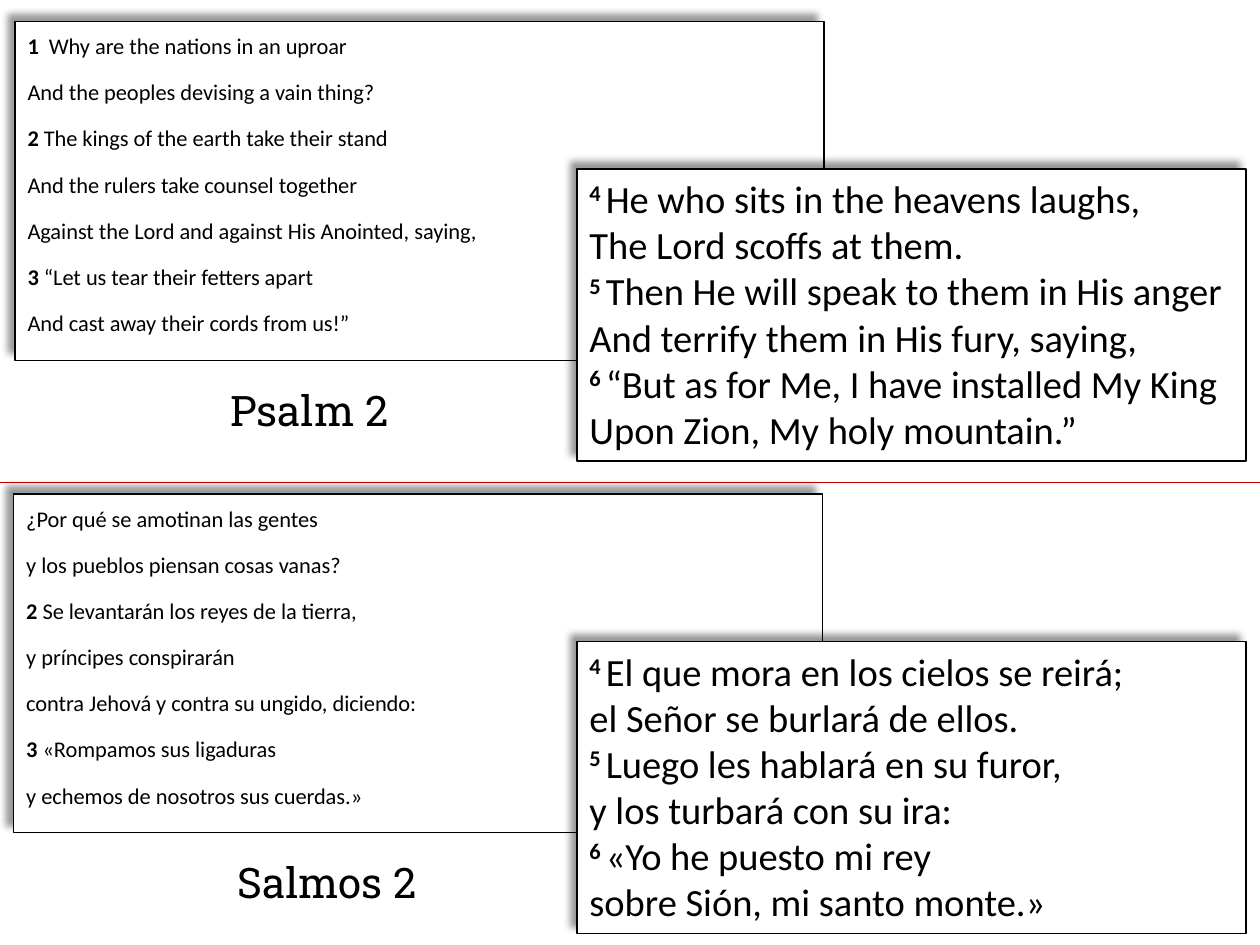
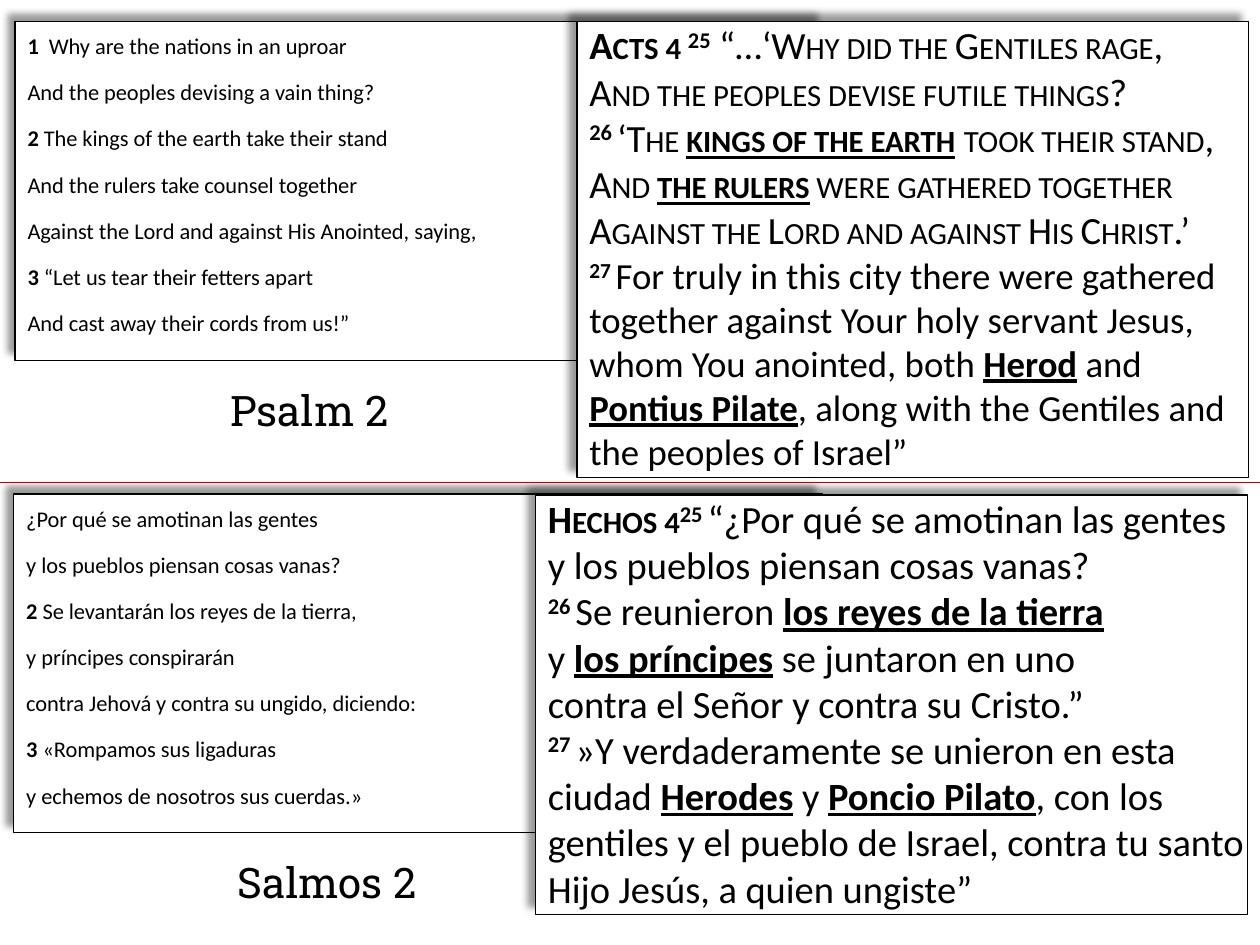
from lxml.etree import SubElement
from pptx import Presentation
from pptx.dml.color import RGBColor
from pptx.enum.shapes import MSO_CONNECTOR, MSO_SHAPE
from pptx.enum.text import MSO_ANCHOR, MSO_AUTO_SIZE, PP_ALIGN
from pptx.oxml.ns import qn
from pptx.util import Inches, Pt

COLORS = {"ink": "000000", "paper": "FFFFFF", "divider": "C00000"}
VERSE_FONT, TITLE_FONT = "Calibri", "Roboto Slab"
VERSE_SIZE, TITLE_SIZE = 22, 24
WIDTH, HEIGHT = 10, 7.5
DIVIDER_TOP = 3.83
DEFAULT_INSETS = (0.1, 0.05, 0.1, 0.05)

# Run styles: b bold, u underlined, s small capitals, ^ raised
PSALM_1_3 = [
    [("1  ", "b"), ("Why are the nations in an uproar\nAnd the peoples devising a vain thing?", "")],
    [("2", "b"), (" The kings of the earth take their stand\n"
                  "And the rulers take counsel together\n"
                  "Against the Lord and against His Anointed, saying,\n", ""),
     ("3 ", "b"), ("“Let us tear their fetters apart\nAnd cast away their cords from us!”", "")],
]
PSALM_4_6 = [
    [("4 ", "b^"), ("He who sits in the heavens laughs,\nThe Lord scoffs at them.", "")],
    [("5 ", "b^"), ("Then He will speak to them in His anger\n"
                    "And terrify them in His fury, saying,\n", ""),
     ("6 ", "b^"), ("“But as for Me, I have installed My King\nUpon Zion, My holy mountain.”", "")],
]
SALMOS_1_3 = [
    [("¿Por qué se amotinan las gentes\ny los pueblos piensan cosas vanas?", "")],
    [("2 ", "b"), ("Se levantarán los reyes de la tierra,\ny príncipes conspirarán\n"
                   "contra Jehová y contra su ungido, diciendo:\n", ""),
     ("3 ", "b"), ("«Rompamos sus ligaduras\ny echemos de nosotros sus cuerdas.»", "")],
]
SALMOS_4_6 = [
    [("4 ", "b^"), ("El que mora en los cielos se reirá;\nel Señor se burlará de ellos.", "")],
    [("5 ", "b^"), ("Luego les hablará en su furor,\ny los turbará con su ira:\n", ""),
     ("6 ", "b^"), ("«Yo he puesto mi rey\nsobre Sión, mi santo monte.»", "")],
]
ACTS = [
    [("Acts 4 ", "bs"), ("25", "b^"), (" “…‘", ""), ("Why did the Gentiles rage", "s"), (",\n", ""),
     ("And the peoples devise futile things", "s"), ("?\n", ""),
     ("26 ", "b^"), ("‘", ""), ("The ", "s"), ("kings of the earth", "bus"), (" ", ""),
     ("took their stand", "s"), (",\n", ""), ("And ", "s"), ("the rulers", "bus"),
     (" were gathered together\nAgainst the Lord and against His Christ", "s"), (".’", "")],
    [("27 ", "b^"), ("For truly in this city there were gathered together against Your holy servant "
                     "Jesus, whom You anointed, both ", ""),
     ("Herod", "bu"), (" and ", ""), ("Pontius Pilate", "bu"),
     (", along with the Gentiles and the peoples of Israel”", "")],
]
HECHOS = [
    [("Hechos 4", "bs"), ("25 ", "b^"),
     ("“¿Por qué se amotinan las gentes\ny los pueblos piensan cosas vanas?\n", ""),
     ("26 ", "b^"), ("Se reunieron ", ""), ("los reyes de la tierra\n", "bu"), ("y ", ""),
     ("los príncipes", "bu"), (" se juntaron en uno\ncontra el Señor y contra su Cristo.”", "")],
    [("27 ", "b^"), ("»Y verdaderamente se unieron en esta ciudad ", ""), ("Herodes", "bu"),
     (" y ", ""), ("Poncio Pilato", "bu"),
     (", con los gentiles y el pueblo de Israel, contra tu santo Hijo Jesús, a quien ungiste”", "")],
]

OPENINGS = [(PSALM_1_3, (0.12, 0.17, 6.42, 2.69)), (SALMOS_1_3, (0.11, 3.92, 6.42, 2.69))]
TITLES = [("Psalm 2", (1.66, 3, 1.59, 0.5)), ("Salmos 2", (1.65, 6.75, 1.89, 0.5))]
SLIDES = [
    [{"verses": PSALM_4_6, "place": (4.58, 1.34, 5.31, 2.32)},
     {"verses": SALMOS_4_6, "place": (4.58, 5.09, 5.31, 2.32)}],
    [{"verses": ACTS, "place": (4.58, 0.17, 5.33, 3.62), "insets": (0.1, 0, 0.1, 0),
      "sizes": (VERSE_SIZE, 21)},
     {"verses": HECHOS, "place": (4.25, 3.93, 5.65, 3.33), "insets": (0.1, 0, 0, 0)}],
]


def color(name):
    return RGBColor.from_string(COLORS[name])


def inches(lengths):
    return [Inches(length) for length in lengths]


def style_run(run, style, size):
    run.font.name = VERSE_FONT
    run.font.size = Pt(size)
    run.font.color.rgb = color("ink")
    run.font.bold = "b" in style
    run.font.underline = "u" in style
    properties = run.font._element
    if "s" in style:
        properties.set("cap", "small")
    if "^" in style:
        properties.set("baseline", "30000")


def cast_shadow(box):
    box.shadow.inherit = False
    effects = box._element.spPr.find(qn("a:effectLst"))
    shadow = SubElement(effects, qn("a:outerShdw"), blurRad=str(Pt(4)), dist=str(Pt(6)),
                        dir=str(225 * 60000), algn="br", rotWithShape="0")
    tint = SubElement(shadow, qn("a:srgbClr"), val=COLORS["ink"])
    SubElement(tint, qn("a:alpha"), val="40000")


def set_insets(frame, insets):
    (frame.margin_left, frame.margin_top,
     frame.margin_right, frame.margin_bottom) = inches(insets)


def add_verses(slide, verses, place, insets=DEFAULT_INSETS,
               sizes=(VERSE_SIZE, VERSE_SIZE), extra_style=""):
    box = slide.shapes.add_shape(MSO_SHAPE.RECTANGLE, *inches(place))
    box.fill.solid()
    box.fill.fore_color.rgb = color("paper")
    box.line.color.rgb = color("ink")
    box.line.width = Pt(0.75)
    cast_shadow(box)
    frame = box.text_frame
    frame.word_wrap = True
    frame.auto_size = MSO_AUTO_SIZE.SHAPE_TO_FIT_TEXT
    frame.vertical_anchor = MSO_ANCHOR.TOP
    set_insets(frame, insets)
    for index, (runs, size) in enumerate(zip(verses, sizes)):
        paragraph = frame.add_paragraph() if index else frame.paragraphs[0]
        paragraph.alignment = PP_ALIGN.LEFT
        for text, style in runs:
            for number, line in enumerate(text.split("\n")):
                if number:
                    paragraph.add_line_break()
                if line:
                    run = paragraph.add_run()
                    run.text = line
                    style_run(run, style + extra_style, size)


def write_title(holder, text, place):
    holder.left, holder.top, holder.width, holder.height = inches(place)
    frame = holder.text_frame
    frame.text = text
    frame.word_wrap = True
    frame.auto_size = MSO_AUTO_SIZE.SHAPE_TO_FIT_TEXT
    frame.vertical_anchor = MSO_ANCHOR.TOP
    set_insets(frame, DEFAULT_INSETS)
    paragraph = frame.paragraphs[0]
    paragraph.alignment = PP_ALIGN.CENTER
    font = paragraph.runs[0].font
    font.name = TITLE_FONT
    font.size = Pt(TITLE_SIZE)
    font.color.rgb = color("ink")


def add_divider(slide):
    divider = slide.shapes.add_connector(
        MSO_CONNECTOR.STRAIGHT, *inches((0, DIVIDER_TOP, WIDTH, DIVIDER_TOP)))
    divider.line.color.rgb = color("divider")
    divider.line.width = Pt(0.75)
    SubElement(divider._element.spPr, qn("a:effectLst"))


def main():
    deck = Presentation()
    deck.slide_width, deck.slide_height = inches((WIDTH, HEIGHT))
    for replies in SLIDES:
        slide = deck.slides.add_slide(deck.slide_layouts[5])
        for (opening, place), reply, (title, title_place) in zip(OPENINGS, replies, TITLES):
            add_verses(slide, opening, place, extra_style="^")
            add_verses(slide, **reply)
            if title == TITLES[0][0]:
                holder = slide.shapes.title
            else:
                holder = slide.shapes.add_textbox(*inches(title_place))
            write_title(holder, title, title_place)
        add_divider(slide)
    deck.save("out.pptx")


if __name__ == "__main__":
    main()
